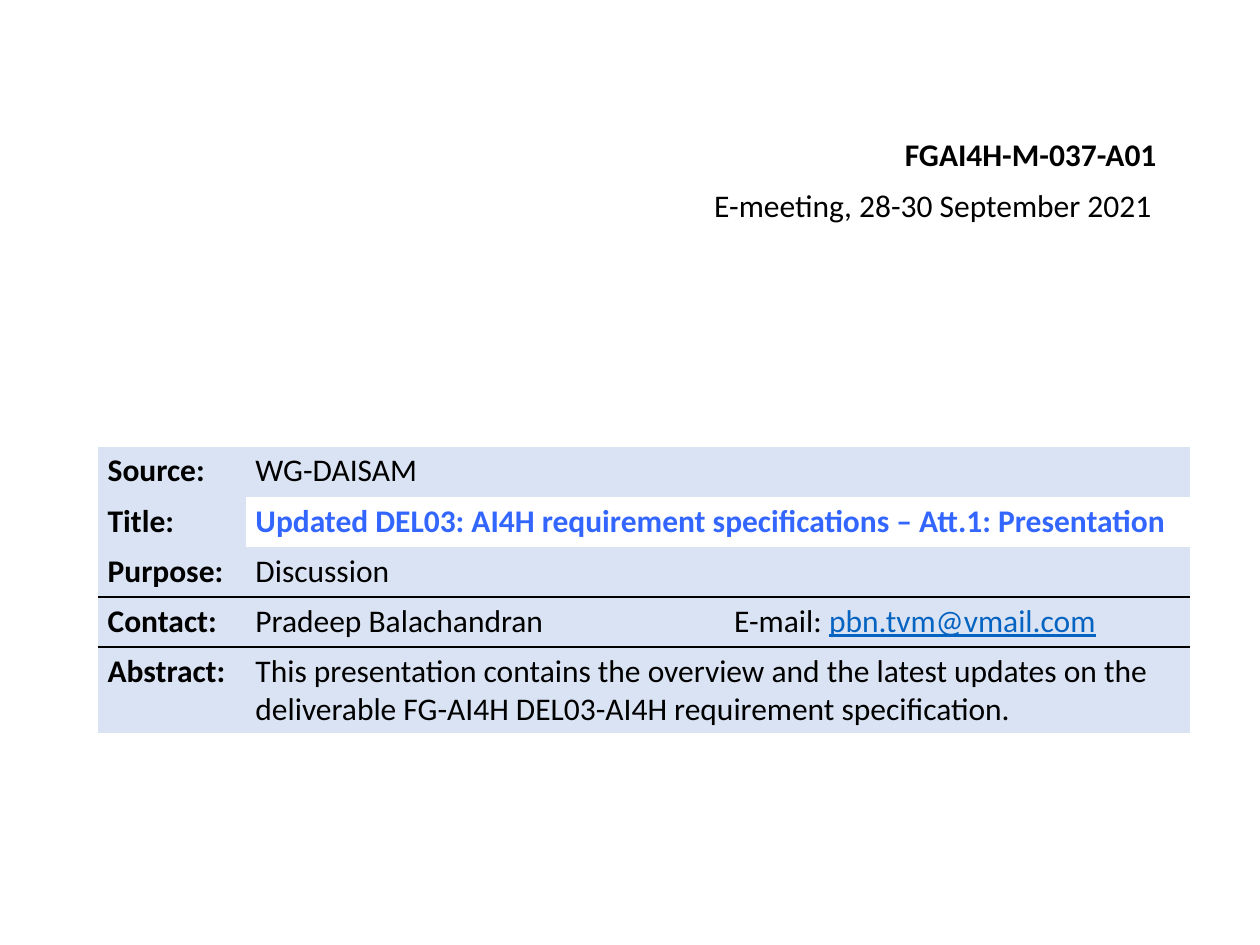
"""Build the cover slide of a meeting document with its details table."""
from lxml.etree import SubElement
from pptx import Presentation
from pptx.dml.color import RGBColor
from pptx.enum.text import MSO_AUTO_SIZE, PP_ALIGN
from pptx.oxml.ns import qn
from pptx.util import Cm, Pt

BLACK, BLUE, LINK, PALE = "000000", "3366FF", "0563C1", "DAE3F3"
NO_STYLE = "{2D5ABB26-0587-4C30-8999-92F81FD0307C}"

HEADINGS = [
    ("FGAI4H-M-037-A01", True, (17.91, 2.59, 5.66, 1.02)),
    ("E-meeting, 28-30 September 2021", False, (14.02, 3.63, 9.45, 1.02)),
]
ROWS = [
    ("Source:", [[("WG-DAISAM", {})]]),
    ("Title:", [[("Updated DEL03: AI4H requirement specifications – Att.1: Presentation",
                  {"bold": True, "color": BLUE})]]),
    ("Purpose:", [[("Discussion", {})]]),
    ("Contact:", [[("Pradeep Balachandran", {})],
                  [("E-mail: ", {}),
                   ("pbn.tvm@vmail.com", {"color": LINK, "underline": True})]]),
    ("Abstract:", [[("This presentation contains the overview and the latest updates on the "
                     "deliverable FG-AI4H DEL03-AI4H requirement specification.", {})]]),
]
COL_WIDTHS = [2.98, 9.65, 9.38]
ROW_HEIGHTS = [1.01, 1.01, 1.01, 1.01, 1.7]
TABLE_LEFT, TABLE_TOP = 1.98, 9.01
RULED_AFTER = {2, 3}
UNFILLED = {(1, 1), (1, 2)}


def rgb(value):
    return RGBColor.from_string(value)


def add_run(p, text, bold=False, color=BLACK, underline=None):
    r = p.add_run()
    r.text = text
    r.font.name, r.font.size = "Calibri", Pt(18)
    r.font.bold, r.font.underline = bold, underline
    r.font.color.rgb = rgb(color)


def add_border(cell, side):
    ln = SubElement(cell._tc.get_or_add_tcPr(), qn(f"a:ln{side}"), w=str(Pt(1.5)))
    fill = SubElement(ln, qn("a:solidFill"))
    SubElement(fill, qn("a:srgbClr"), val=BLACK)


def add_heading(s, text, bold, box):
    tf = s.shapes.add_textbox(*map(Cm, box)).text_frame
    tf.word_wrap = False
    tf.auto_size = MSO_AUTO_SIZE.SHAPE_TO_FIT_TEXT
    p = tf.paragraphs[0]
    p.alignment = PP_ALIGN.RIGHT
    add_run(p, text, bold)


def format_cell(cell, row, col):
    cell.margin_left = cell.margin_right = Cm(0.19)
    cell.margin_top = cell.margin_bottom = Cm(0.1)
    if row - 1 in RULED_AFTER:
        add_border(cell, "T")
    if row in RULED_AFTER:
        add_border(cell, "B")
    if (row, col) in UNFILLED:
        cell.fill.background()
    else:
        cell.fill.solid()
        cell.fill.fore_color.rgb = rgb(PALE)


def add_details(s):
    frame = s.shapes.add_table(len(ROWS), len(COL_WIDTHS), Cm(TABLE_LEFT), Cm(TABLE_TOP),
                               Cm(sum(COL_WIDTHS)), Cm(sum(ROW_HEIGHTS)))
    table = frame.table
    table.first_row = table.horz_banding = False
    table._tbl.tblPr.find(qn("a:tableStyleId")).text = NO_STYLE
    for column, width in zip(table.columns, COL_WIDTHS):
        column.width = Cm(width)
    for i, (label, values) in enumerate(ROWS):
        table.rows[i].height = Cm(ROW_HEIGHTS[i])
        for j in range(len(COL_WIDTHS)):
            format_cell(table.cell(i, j), i, j)
        if len(values) == 1:
            table.cell(i, 1).merge(table.cell(i, 2))
        for j, runs in enumerate([[(label, {"bold": True})], *values]):
            p = table.cell(i, j).text_frame.paragraphs[0]
            for text, style in runs:
                add_run(p, text, **style)


def main():
    prs = Presentation()
    prs.slide_width, prs.slide_height = Cm(25.4), Cm(19.05)
    s = prs.slides.add_slide(prs.slide_layouts[6])
    for heading in HEADINGS:
        add_heading(s, *heading)
    add_details(s)
    prs.save("out.pptx")


if __name__ == "__main__":
    main()
